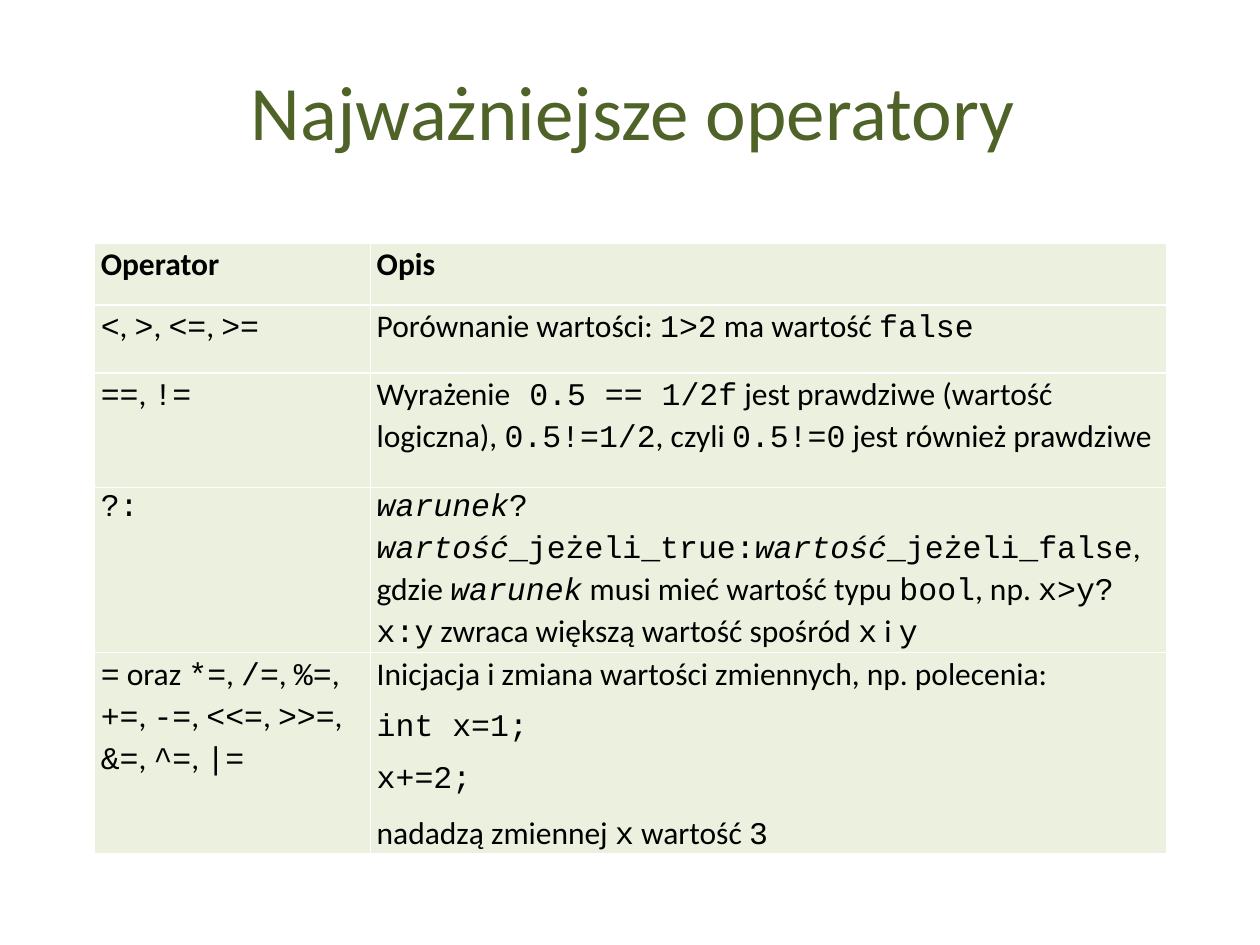
import lxml.etree
import pptx
import pptx.dml.color
import pptx.enum.text
import pptx.oxml.ns
import pptx.util
from pptx.util import Inches

TEXT_FONT, CODE_FONT = "Calibri", "Courier New"
CODE_MARK, ITALIC_MARK = "`", "~"  # each mark switches its style on or off

COLUMN_WIDTHS = [2.19, 6.32]
ROW_HEIGHTS = [0.49, 0.54, 0.91, 0.91, 0.91]
ROWS = [
    ("Operator", "Opis"),
    ("`<`, `>`, `<=`, `>=`", "Porównanie wartości: `1>2` ma wartość `false`"),
    ("`==`, `!=`",
     "Wyrażenie` 0.5 == 1/2f` jest prawdziwe (wartość logiczna), "
     "`0.5!=1/2`, czyli `0.5!=0` jest również prawdziwe"),
    ("`?:`",
     "`~warunek~?~wartość~_jeżeli_true:~wartość~_jeżeli_false`, "
     "gdzie `~warunek~` musi mieć wartość typu `bool`, np. `x>y?x:y` "
     "zwraca większą wartość spośród `x` i `y`"),
    ("`=` oraz `*=`, `/=`, `%=`, `+=`, `-=`, `<<=`, `>>=`, `&=`, `^=`, `|=`",
     "Inicjacja i zmiana wartości zmiennych, np. polecenia:\n"
     "`int x=1;`\n`x+=2;`\nnadadzą zmiennej `x` wartość `3`"),
]


def color(hex_string):
    return pptx.dml.color.RGBColor.from_string(hex_string)


def add_title(slide, text):
    title = slide.shapes.title
    title.left, title.top = Inches(0.2), Inches(0.51)
    title.width, title.height = Inches(9.65), Inches(0.72)
    title.text_frame.vertical_anchor = pptx.enum.text.MSO_ANCHOR.MIDDLE
    title.text_frame.text = text
    paragraph = title.text_frame.paragraphs[0]
    paragraph.alignment = pptx.enum.text.PP_ALIGN.CENTER
    paragraph.font.name = TEXT_FONT
    paragraph.font.size = pptx.util.Pt(44)
    paragraph.font.color.rgb = color("4F6228")


def add_marked_runs(paragraph, marked_text):
    """Write code spans in the code font and marked words in italics."""
    for part_index, part in enumerate(marked_text.split(CODE_MARK)):
        for piece_index, piece in enumerate(part.split(ITALIC_MARK)):
            if piece:
                run = paragraph.add_run()
                run.text = piece
                run.font.name = CODE_FONT if part_index % 2 else TEXT_FONT
                if piece_index % 2:
                    run.font.italic = True


def set_borders(cell, hex_string, points):
    properties = cell._tc.get_or_add_tcPr()
    for index, side in enumerate(("lnL", "lnR", "lnT", "lnB")):
        line = lxml.etree.Element(pptx.oxml.ns.qn(f"a:{side}"),
                                  w=str(pptx.util.Pt(points)))
        fill = lxml.etree.SubElement(line, pptx.oxml.ns.qn("a:solidFill"))
        lxml.etree.SubElement(fill, pptx.oxml.ns.qn("a:srgbClr"), val=hex_string)
        properties.insert(index, line)


def fill_cell(cell, marked_text, bold):
    cell.margin_left = cell.margin_right = Inches(0.05)
    cell.margin_top = cell.margin_bottom = 0
    cell.fill.solid()
    cell.fill.fore_color.rgb = color("EBF1DE")
    set_borders(cell, "FFFFFF", 1)
    for index, line in enumerate(marked_text.split("\n")):
        frame = cell.text_frame
        paragraph = frame.add_paragraph() if index else frame.paragraphs[0]
        paragraph.line_spacing = 1.07
        paragraph.space_after = pptx.util.Pt(8)
        paragraph.font.size = pptx.util.Pt(18)
        paragraph.font.bold = bold
        paragraph.font.color.rgb = color("000000")
        add_marked_runs(paragraph, line)


def add_operator_table(slide):
    frame = slide.shapes.add_table(
        len(ROWS), len(COLUMN_WIDTHS),
        Inches(0.75), Inches(1.93), Inches(8.5), Inches(4.53))
    table = frame.table
    table.first_row = table.horz_banding = False
    for column, width in zip(table.columns, COLUMN_WIDTHS):
        column.width = Inches(width)
    for row, height in zip(table.rows, ROW_HEIGHTS):
        row.height = Inches(height)
    for row_index, texts in enumerate(ROWS):
        for column_index, text in enumerate(texts):
            fill_cell(table.cell(row_index, column_index), text,
                      bold=row_index == 0)
    # Rows grow with their text, so the frame is taller than their minimum
    frame.width, frame.height = Inches(8.5), Inches(4.53)


def main():
    presentation = pptx.Presentation()
    presentation.slide_width = Inches(10)
    presentation.slide_height = Inches(7.5)
    slide = presentation.slides.add_slide(presentation.slide_layouts[5])
    add_title(slide, "Najważniejsze operatory")
    add_operator_table(slide)
    presentation.save("out.pptx")


if __name__ == "__main__":
    main()
